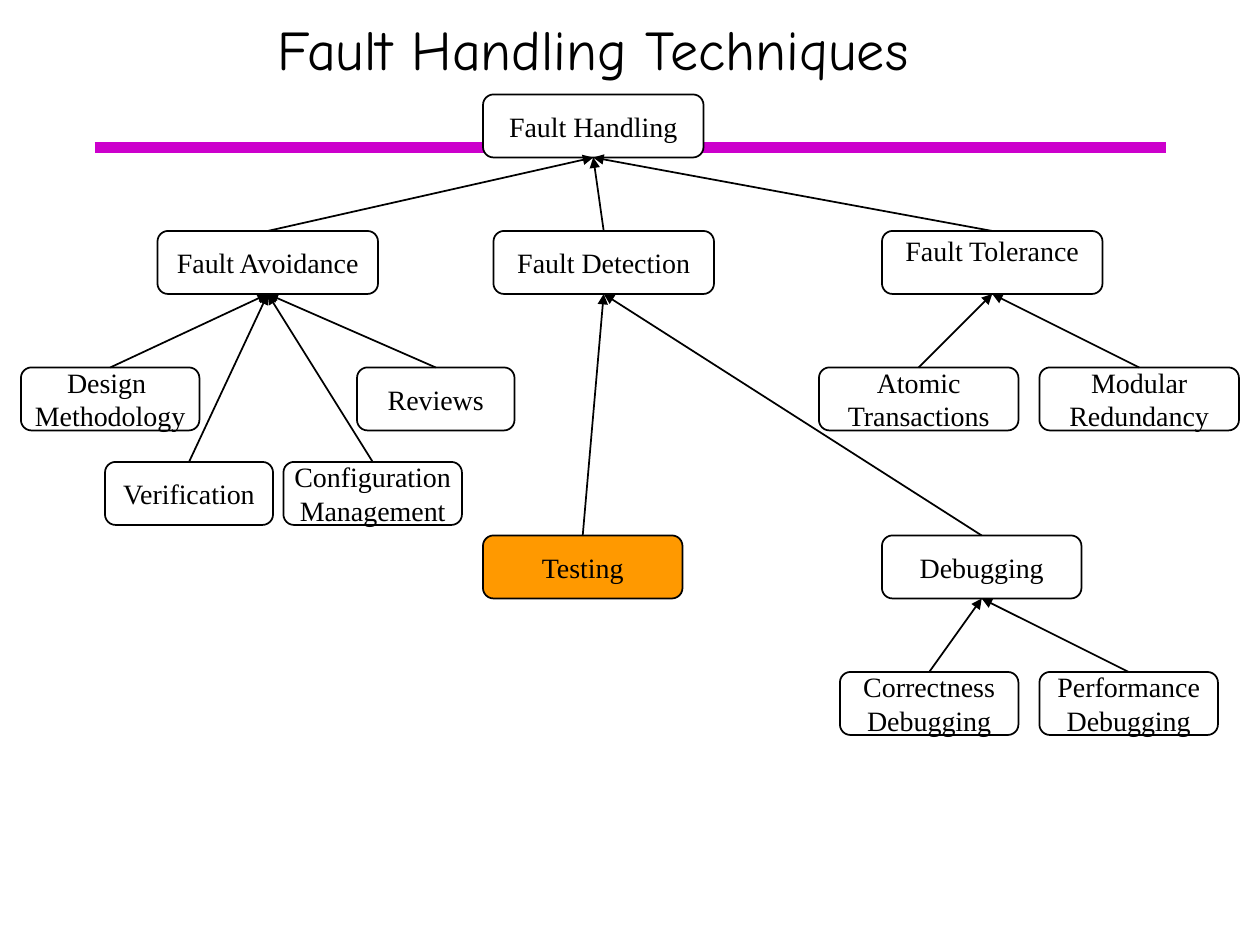
from lxml.etree import SubElement
from pptx import Presentation
from pptx.dml.color import RGBColor
from pptx.enum.shapes import MSO_CONNECTOR, MSO_SHAPE
from pptx.enum.text import MSO_ANCHOR, PP_ALIGN
from pptx.oxml.ns import qn
from pptx.util import Inches, Pt

COLORS = {"ink": "000000", "paper": "FFFFFF", "rule": "CC00CC", "focus": "FF9900"}
COLUMNS, ROWS = 120, 90  # twelve grid cells to the inch
BOX_ROWS = 6
TOP, BOTTOM = 0, 2  # connection sites

# name: (lines, column, row, columns wide, parent)
TREE = {
    "handling": (["Fault Handling"], 46, 9, 21, None),
    "avoidance": (["Fault Avoidance"], 15, 22, 21, "handling"),
    "detection": (["Fault Detection"], 47, 22, 21, "handling"),
    "tolerance": (["Fault Tolerance"], 84, 22, 21, "handling"),
    "design": (["Design ", "Methodology"], 2, 35, 17, "avoidance"),
    "verification": (["Verification"], 10, 44, 16, "avoidance"),
    "configuration": (["Configuration", "Management"], 27, 44, 17, "avoidance"),
    "reviews": (["Reviews"], 34, 35, 15, "avoidance"),
    "testing": (["Testing"], 46, 51, 19, "detection"),
    "debugging": (["Debugging"], 84, 51, 19, "detection"),
    "atomic": (["Atomic", "Transactions"], 78, 35, 19, "tolerance"),
    "modular": (["Modular", "Redundancy"], 99, 35, 19, "tolerance"),
    "correctness": (["Correctness", "Debugging"], 80, 64, 17, "debugging"),
    "performance": (["Performance", "Debugging"], 99, 64, 17, "debugging"),
}


def color(name):
    return RGBColor.from_string(COLORS[name])


def write_lines(frame, lines, size, font):
    frame.vertical_anchor = MSO_ANCHOR.MIDDLE
    for index, line in enumerate(lines):
        para = frame.paragraphs[0] if index == 0 else frame.add_paragraph()
        para.alignment = PP_ALIGN.CENTER
        span = para.add_run()
        span.text = line
        span.font.size = Pt(size)
        span.font.name = font
        span.font.color.rgb = color("ink")


def add_line(page, start, end, line_color, width):
    line = page.shapes.add_connector(MSO_CONNECTOR.STRAIGHT, *start, *end)
    line.line.color.rgb = color(line_color)
    line.line.width = Pt(width)
    SubElement(line._element.spPr, qn("a:effectLst"))
    return line


def add_header(page, left, top, width, height):
    # Rule below the title, partly covered by the root box
    rule_y = top + round(height * 1.52)
    add_line(page, (Inches(0.75), rule_y), (Inches(9.25), rule_y), "rule", 6)

    title = page.shapes.add_textbox(left, top, width, height)
    title.text_frame.word_wrap = True
    write_lines(title.text_frame, ["Fault Handling Techniques"], 32, "Comic Neue")


def add_node(page, lines, left, top, width, height, fill):
    box = page.shapes.add_shape(MSO_SHAPE.ROUNDED_RECTANGLE, left, top, width, height)
    box.shadow.inherit = False
    box.fill.solid()
    box.fill.fore_color.rgb = color(fill)
    box.line.color.rgb = color("ink")
    box.line.width = Pt(1)
    box.text_frame.word_wrap = False
    write_lines(box.text_frame, lines, 16, "Times New Roman")
    return box


def add_arrow(page, child, parent):
    arrow = add_line(page, (0, 0), (0, 0), "ink", 1)
    arrow.begin_connect(child, TOP)
    arrow.end_connect(parent, BOTTOM)
    SubElement(arrow.line._get_or_add_ln(), qn("a:tailEnd"), type="triangle")


def add_tree(page, left, top, width, height):
    # Boxes on the grid
    boxes = {}
    for name, (lines, column, row, columns, _) in TREE.items():
        boxes[name] = add_node(
            page, lines,
            left + width * column // COLUMNS, top + height * row // ROWS,
            width * columns // COLUMNS, height * BOX_ROWS // ROWS,
            "focus" if name == "testing" else "paper")

    # This label sits at the top of its box
    raised = boxes["tolerance"].text_frame
    raised.vertical_anchor = MSO_ANCHOR.TOP
    raised.margin_top = 0

    # Arrows from each child to its parent
    for name, (*_, parent) in TREE.items():
        if parent:
            add_arrow(page, boxes[name], boxes[parent])


def main():
    deck = Presentation()
    deck.slide_width, deck.slide_height = Inches(10), Inches(7.5)
    page = deck.slides.add_slide(deck.slide_layouts[6])
    add_header(page, Inches(0.25), 0, Inches(8.92), Inches(0.77))
    add_tree(page, 0, 0, deck.slide_width, deck.slide_height)
    deck.save("out.pptx")


if __name__ == "__main__":
    main()
